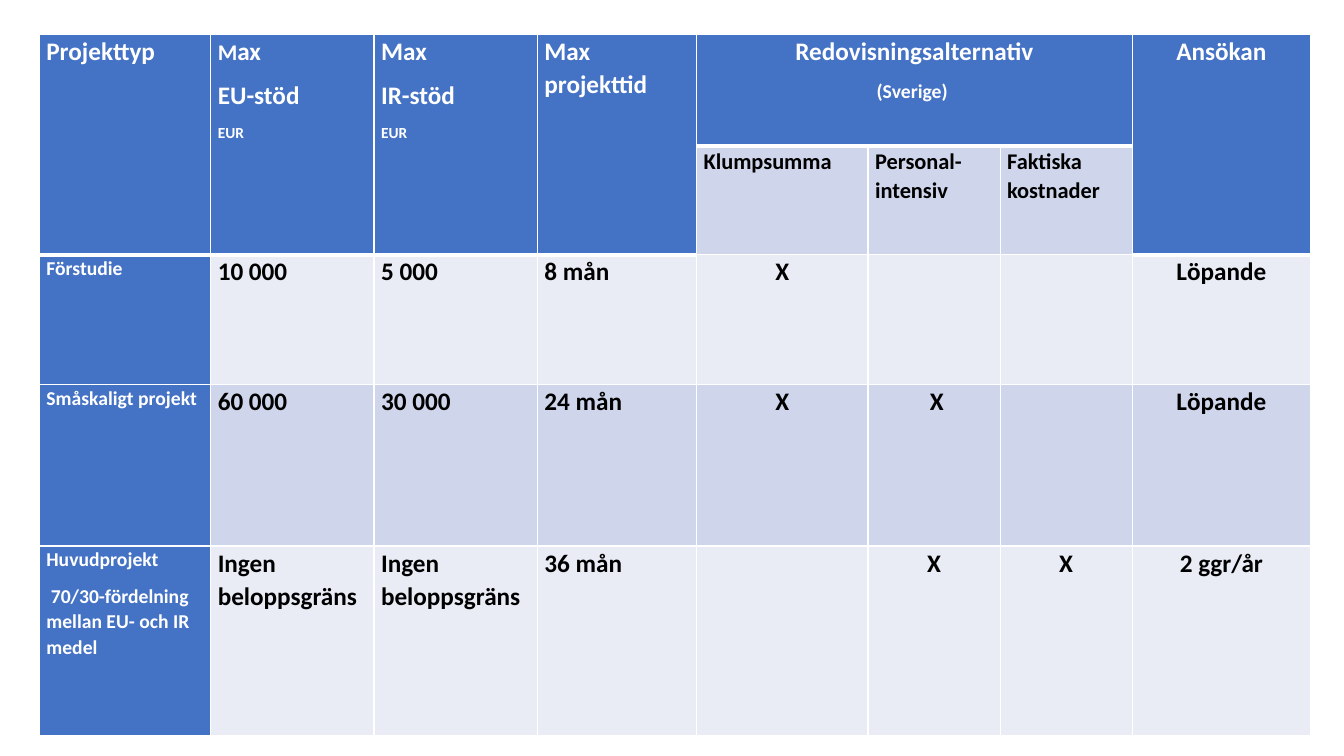
from lxml import etree
from pptx import Presentation
from pptx.dml.color import RGBColor
from pptx.enum.text import PP_ALIGN as Align
from pptx.oxml.ns import qn
from pptx.util import Inches, Pt

BLUE = RGBColor(0x44, 0x72, 0xC4)
BAND_DARK = RGBColor(0xCF, 0xD5, 0xEA)
BAND_LIGHT = RGBColor(0xE9, 0xEB, 0xF5)
WHITE = RGBColor(0xFF, 0xFF, 0xFF)
BLACK = RGBColor(0, 0, 0)

COL_WIDTHS = [1.7, 1.62, 1.62, 1.58, 1.7, 1.31, 1.31, 1.77]
ROW_HEIGHTS = [1.11, 0.92, 1.29, 1.6, 1.88]
REPORTING_COLS = range(4, 7)
CENTRED_FROM = 4

# Each header cell is a list of paragraphs, each a list of (text, size) runs
HEADERS = {
    0: [[("Projekttyp", 18)]],
    1: [[("M", 16), ("ax", 18)], [("EU-stöd", 18)], [("EUR", 11)]],
    2: [[("Max", 18)], [("IR-stöd", 18)], [("EUR", 11)]],
    3: [[("Max projekttid", 18)]],
    4: [[("Redovisningsalternativ", 18)], [("(Sverige) ", 14)]],
    7: [[("Ansökan", 18)]],
}
SUBHEADERS = ["Klumpsumma", "Personal-intensiv", "Faktiska kostnader"]
PROJECTS = [
    (["Förstudie"], "10 000", "5 000", "8 mån", "X", "", "", "Löpande"),
    (["Småskaligt projekt"], "60 000", "30 000", "24 mån", "X", " X", "", "Löpande"),
    (["Huvudprojekt", " 70/30-fördelning mellan EU- och IR medel"],
     "Ingen beloppsgräns", "Ingen beloppsgräns", "36 mån", "", "X", "X", "2 ggr/år"),
]


def add_border(cell, side, width):
    ln = etree.SubElement(cell._tc.get_or_add_tcPr(), qn(f"a:ln{side}"), w=str(Pt(width)))
    fill = etree.SubElement(ln, qn("a:solidFill"))
    etree.SubElement(fill, qn("a:srgbClr"), val=str(WHITE))


def add_grid(table):
    """Draw white cell borders, heavy below the blue header."""
    for c in range(len(COL_WIDTHS)):
        header_end = 0 if c in REPORTING_COLS else 1
        for r in range(len(ROW_HEIGHTS)):
            top = 3 if r == header_end + 1 else 1
            bottom = 3 if r in (0, header_end) else 1
            for side, width in (("L", 1), ("R", 1), ("T", top), ("B", bottom)):
                add_border(table.cell(r, c), side, width)


def fill_cell(cell, paragraphs, fill, color, align=Align.LEFT):
    margins = {"margin_left": Inches(0.07), "margin_right": Inches(0.07),
               "margin_top": 0, "margin_bottom": 0}
    for name, value in margins.items():
        setattr(cell, name, value)
    cell.fill.solid()
    cell.fill.fore_color.rgb = fill
    tf = cell.text_frame
    for i, runs in enumerate(paragraphs):
        p = tf.paragraphs[0] if i == 0 else tf.add_paragraph()
        para_format = {"alignment": align, "line_spacing": 1.07, "space_after": Pt(8)}
        for name, value in para_format.items():
            setattr(p, name, value)
        for text, size in runs:
            r = p.add_run()
            r.text = text
            for name, value in {"name": "Calibri", "size": Pt(size), "bold": True}.items():
                setattr(r.font, name, value)
            r.font.color.rgb = color


def add_table(slide):
    table = slide.shapes.add_table(
        len(ROW_HEIGHTS), len(COL_WIDTHS), Inches(0.39), Inches(0.34),
        Inches(sum(COL_WIDTHS)), Inches(sum(ROW_HEIGHTS))).table
    for col, width in zip(table.columns, COL_WIDTHS):
        col.width = Inches(width)
    for row, height in zip(table.rows, ROW_HEIGHTS):
        row.height = Inches(height)
    return table


def add_headers(table):
    for c, paragraphs in HEADERS.items():
        end = (0, REPORTING_COLS[-1]) if c in REPORTING_COLS else (1, c)
        table.cell(0, c).merge(table.cell(*end))
        align = Align.CENTER if c >= CENTRED_FROM else Align.LEFT
        fill_cell(table.cell(0, c), paragraphs, BLUE, WHITE, align)
    for c, text in zip(REPORTING_COLS, SUBHEADERS):
        fill_cell(table.cell(1, c), [[(text, 16)]], BAND_DARK, BLACK)


def add_projects(table):
    for r, (names, *values) in enumerate(PROJECTS, start=2):
        fill_cell(table.cell(r, 0), [[(name, 14)] for name in names], BLUE, WHITE)
        band = BAND_DARK if r % 2 else BAND_LIGHT
        for c, text in enumerate(values, start=1):
            align = Align.CENTER if c >= CENTRED_FROM else Align.LEFT
            paragraphs = [[(text, 18)]] if text else []
            fill_cell(table.cell(r, c), paragraphs, band, BLACK, align)


def main():
    prs = Presentation()
    prs.slide_width, prs.slide_height = Inches(13.33), Inches(7.5)
    slide = prs.slides.add_slide(prs.slide_layouts[6])

    # Borders come before fills in the cell properties
    table = add_table(slide)
    add_grid(table)
    add_headers(table)
    add_projects(table)
    prs.save("out.pptx")


if __name__ == "__main__":
    main()
